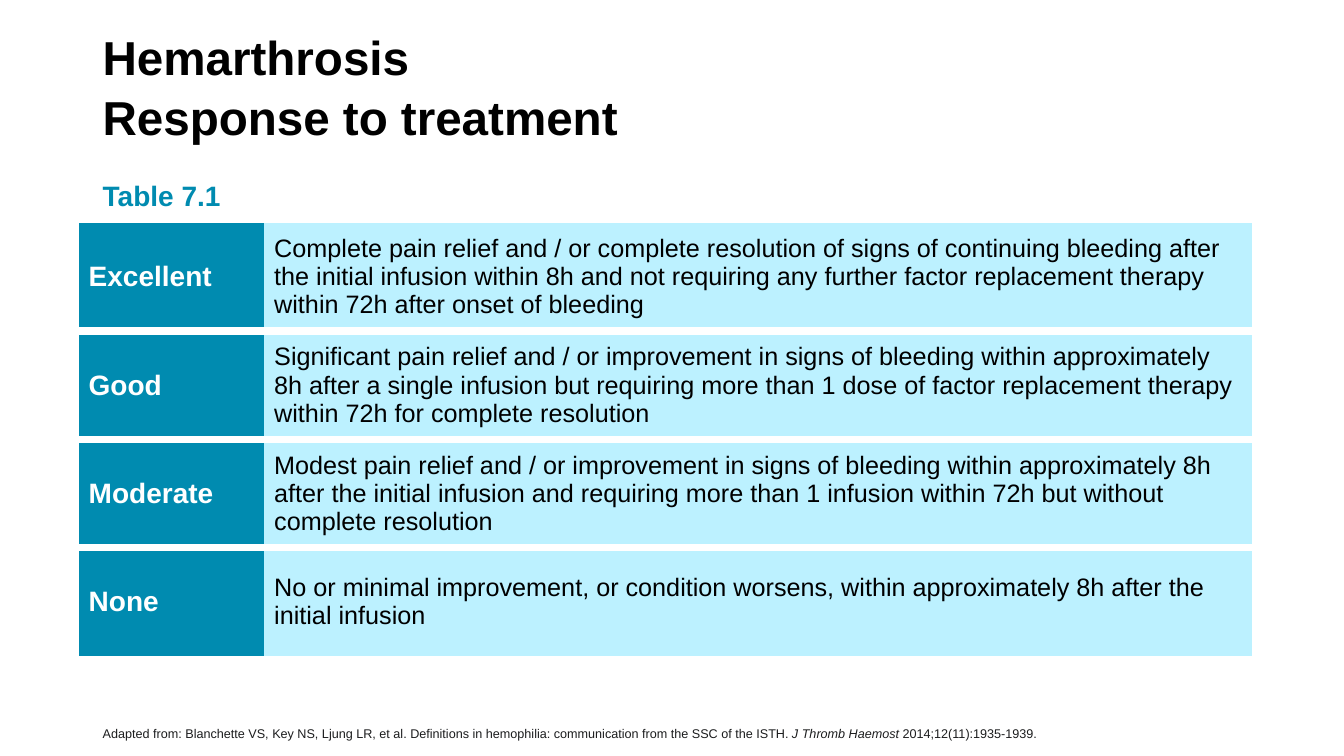
"""Builds the slide on how joint bleeds respond to treatment."""
from lxml import etree
from pptx import Presentation, util as u
from pptx.dml.color import RGBColor
from pptx.enum import text as t
from pptx.oxml import ns

PX = 9144
HEX = {"ink": "000000", "note": "1C1D1E", "teal": "008BB0", "pale": "BCF1FF", "white": "FFFFFF"}
ROWS = [
    ("Excellent", "Complete pain relief and / or complete resolution of signs of continuing bleeding after "
     "the initial infusion within 8h and not requiring any further factor replacement therapy "
     "within 72h after onset of bleeding"),
    ("Good", "Significant pain relief and / or improvement in signs of bleeding within approximately "
     "8h after a single infusion but requiring more than 1 dose of factor replacement therapy "
     "within 72h for complete resolution"),
    ("Moderate", "Modest pain relief and / or improvement in signs of bleeding within approximately 8h "
     "after the initial infusion and requiring more than 1 infusion within 72h but without "
     "complete resolution"),
    ("None", "No or minimal improvement, or condition worsens, within approximately 8h after the "
     "initial infusion"),
]
SOURCE = [
    ("Adapted from: Blanchette VS, Key NS, Ljung LR, et al. Definitions in hemophilia: "
     "communication from the SSC of the ISTH. ", False),
    ("J Thromb Haemost ", True),
    ("2014;12(11):1935-1939.", False),
]


def write(frame, parts, size, color="ink", bold=False, lead=1.0):
    """Write (text, italic) parts as one paragraph; a newline breaks the line."""
    para = frame.paragraphs[0]
    para.line_spacing = lead
    for words, slant in parts:
        for i, line in enumerate(words.split("\n")):
            if i:
                para.add_line_break()
            run = para.add_run()
            run.text = line
            font = run.font
            font.name, font.size = "Arial", u.Pt(size)
            font.bold, font.italic = bold, slant
            font.color.rgb = RGBColor.from_string(HEX[color])


def label(slide, box, parts, size, anchor, foot=5, **style):
    """Place a wrapped text box."""
    frame = slide.shapes.add_textbox(*(n * PX for n in box)).text_frame
    frame.word_wrap = True
    frame.vertical_anchor = anchor
    frame.margin_bottom = foot * PX
    write(frame, parts, size, **style)


def rule(cell, side, width=6):
    """Draw a white line on one side of a cell."""
    line = etree.Element(ns.qn("a:ln" + side), w=str(u.Pt(width)))
    fill = etree.SubElement(line, ns.qn("a:solidFill"))
    etree.SubElement(fill, ns.qn("a:srgbClr"), val=HEX["white"])
    cell._tc.get_or_add_tcPr().insert(0, line)


def grades(slide, box, first=184):
    """Place the table of grades, with white gaps between its rows."""
    x, y, w, h = (n * PX for n in box)
    table = slide.shapes.add_table(len(ROWS), 2, x, y, w, h).table
    table.first_row = table.horz_banding = False
    table._tbl.tblPr.find(ns.qn("a:tableStyleId")).text = "{2D5ABB26-0587-4C30-8999-92F81FD0307C}"
    table.columns[0].width = first * PX
    table.columns[1].width = w - first * PX
    looks = [("teal", 20, "white", True), ("pale", 18, "ink", False)]
    for r, row in enumerate(ROWS):
        for c, (words, (fill, size, color, bold)) in enumerate(zip(row, looks)):
            cell = table.cell(r, c)
            cell.vertical_anchor = t.MSO_ANCHOR.MIDDLE
            cell.fill.solid()
            cell.fill.fore_color.rgb = RGBColor.from_string(HEX[fill])
            if r < len(ROWS) - 1:
                rule(cell, "B")
            if r:
                rule(cell, "T")
            write(cell.text_frame, [(words, False)], size, color, bold)


def main():
    """Build and save the slide."""
    deck = Presentation()
    deck.slide_width, deck.slide_height = 1333 * PX, 750 * PX
    slide = deck.slides.add_slide(deck.slide_layouts[6])
    label(slide, (92, 25, 1150, 119), [("Hemarthrosis\nResponse to treatment", False)], 34,
          t.MSO_ANCHOR.MIDDLE, bold=True, lead=1.05)
    label(slide, (92, 171, 1150, 50), [("Table 7.1", False)], 20,
          t.MSO_ANCHOR.TOP, color="teal", bold=True, lead=1.05)
    grades(slide, (78, 221, 1164, 430))
    label(slide, (92, 695, 1085, 40), SOURCE, 9, t.MSO_ANCHOR.BOTTOM, foot=0, color="note")
    deck.save("out.pptx")


if __name__ == "__main__":
    main()
